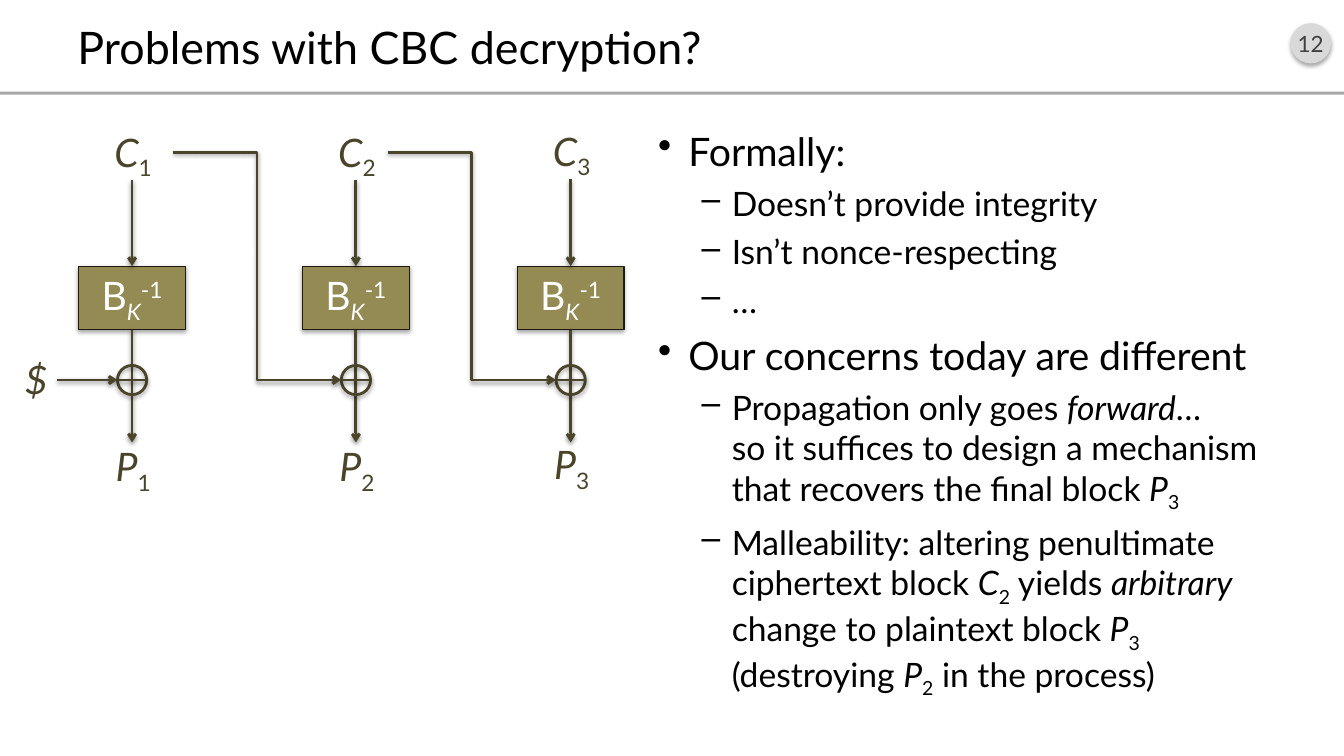
from lxml.etree import SubElement
from pptx import Presentation
from pptx.dml.color import RGBColor
from pptx.enum.shapes import MSO_CONNECTOR, MSO_SHAPE
from pptx.enum.text import MSO_ANCHOR, PP_ALIGN
from pptx.oxml.ns import qn
from pptx.util import Inches, Pt

# Content: runs are (text, style)
TITLE = "Problems with CBC decryption?"
PAGE_NUMBER = "12"
BODY = [  # level, runs
    (0, [("Formally:", "")]),
    (1, [("Doesn’t provide integrity", "")]),
    (1, [("Isn’t nonce-respecting", "")]),
    (1, [("…", "")]),
    (0, [("Our concerns today are different", "")]),
    (1, [("Propagation only goes ", ""), ("forward", "italic"),
         ("…\nso it suffices to design a mechanism that recovers the final block ", ""),
         ("P", "italic"), ("3", "sub")]),
    (1, [("Malleability: altering penultimate ciphertext block ", ""),
         ("C", "italic"), ("2", "sub"), (" yields ", ""), ("arbitrary", "italic"),
         (" change to plaintext block ", ""), ("P", "italic"), ("3", "sub"),
         (" (destroying ", ""), ("P", "italic"), ("2", "sub"), (" in the process)", "")]),
]
CIPHER = [("B", ""), ("K", "italic sub"), ("-1", "sup")]
BLOCKS = [  # number, centre x, label top of C, label top of P
    ("1", 1.31, 1.22, 4.34),
    ("2", 3.53, 1.22, 4.34),
    ("3", 5.66, 1.21, 4.32),
]
LEVELS = [  # bullet, indent, space before, size
    ("•", 0.3, 8, 28),
    ("–", 0.73, 6, 24),
]
BASELINES = {"sub": "-25000", "sup": "30000"}

# Look and measures
FONT = "Lato"
BLACK, WHITE, INK = "000000", "FFFFFF", "4A452A"
BOX_FILL, BOX_LINE = "948A54", "1E1C11"
BOX_WIDTH, BOX_HEIGHT, BOX_TOP = 1.06, 0.63, 2.64
LABEL_WIDTH, LABEL_HEIGHT = 0.78, 0.57
RADIUS, XOR_Y = 0.145, 3.77
FEED_Y, FEED_LENGTH = 1.51, 1.67

presentation = Presentation()
presentation.slide_width, presentation.slide_height = Inches(13.33), Inches(7.5)
slide = presentation.slides.add_slide(presentation.slide_layouts[6])


def color(target, value):
    target.rgb = RGBColor.from_string(value)


def add_shadow(shape, distance, opacity):
    effects = SubElement(shape.element.spPr, qn("a:effectLst"))
    shadow = SubElement(effects, qn("a:outerShdw"), blurRad="40000", dist=str(distance),
                        dir="5400000", rotWithShape="0")
    black = SubElement(shadow, qn("a:srgbClr"), val=BLACK)
    SubElement(black, qn("a:alpha"), val=str(opacity))


def write(paragraph, runs, size, font_color, align=PP_ALIGN.LEFT):
    paragraph.alignment = align
    paragraph.font.name, paragraph.font.size = FONT, Pt(size)
    color(paragraph.font.color, font_color)
    for text, style in runs:
        for index, part in enumerate(text.split("\n")):
            if index:
                paragraph.add_line_break()
            run = paragraph.add_run()
            run.text = part
            for word in style.split():
                if word == "italic":
                    run.font.italic = True
                else:
                    run._r.get_or_add_rPr().set("baseline", BASELINES[word])


def add_text(left, top, width, height):
    box = slide.shapes.add_textbox(*map(Inches, (left, top, width, height)))
    box.text_frame.word_wrap = True
    return box.text_frame


def add_label(center, top, runs, align=PP_ALIGN.CENTER, width=LABEL_WIDTH):
    frame = add_text(center - width / 2, top, width, LABEL_HEIGHT)
    write(frame.paragraphs[0], runs, 28, INK, align)


def add_shape(kind, left, top, width, height, fill=None, line=None, line_width=2, shadow=True):
    shape = slide.shapes.add_shape(kind, *map(Inches, (left, top, width, height)))
    if fill:
        shape.fill.solid()
        color(shape.fill.fore_color, fill)
    else:
        shape.fill.background()
    if line:
        color(shape.line.color, line)
        shape.line.width = Pt(line_width)
    else:
        shape.line.fill.background()
    if shadow:
        add_shadow(shape, 23000, 35000)
    else:
        shape.shadow.inherit = False
    shape.text_frame.vertical_anchor = MSO_ANCHOR.MIDDLE
    return shape


def add_line(x1, y1, x2, y2, kind=MSO_CONNECTOR.STRAIGHT, arrow=True):
    line = slide.shapes.add_connector(kind, *map(Inches, (x1, y1, x2, y2)))
    color(line.line.color, INK)
    line.line.width = Pt(2)
    if arrow:
        SubElement(line.element.spPr.find(qn("a:ln")), qn("a:tailEnd"), type="arrow")
    add_shadow(line, 20000, 38000)
    return line


# Header: page number, rule and title
badge = add_shape(MSO_SHAPE.OVAL, 12.8, 0.23, 0.4, 0.4, fill="D9D9D9")
badge.text_frame.margin_left = badge.text_frame.margin_right = 0
badge.text_frame.word_wrap = False
write(badge.text_frame.paragraphs[0], [(PAGE_NUMBER, "")], 16, "404040", PP_ALIGN.CENTER)
add_shape(MSO_SHAPE.RECTANGLE, 0, 0.91, 13.33, 0.03, fill="A6A6A6", shadow=False)
title = add_text(0.67, 0.16, 12, 0.6)
title.vertical_anchor = MSO_ANCHOR.MIDDLE
write(title.paragraphs[0], [(TITLE, "")], 32, BLACK)

# Bulleted text
body = add_text(6.43, 1.21, 6.24, 5.75)
for index, (level, runs) in enumerate(BODY):
    paragraph = body.add_paragraph() if index else body.paragraphs[0]
    bullet, indent, space, size = LEVELS[level]
    paragraph.level = level
    paragraph.space_before = Pt(space)
    write(paragraph, runs, size, BLACK)
    properties = paragraph._p.get_or_add_pPr()
    properties.set("marL", str(Inches(indent)))
    properties.set("indent", str(Inches(-0.3)))
    marker = SubElement(properties, qn("a:buChar"), char=bullet)
    properties.find(qn("a:defRPr")).addprevious(marker)

# Decryption chains
for number, center, cipher_top, plain_top in BLOCKS:
    box = add_shape(MSO_SHAPE.RECTANGLE, center - BOX_WIDTH / 2, BOX_TOP, BOX_WIDTH, BOX_HEIGHT,
                    BOX_FILL, BOX_LINE, 0.75)
    write(box.text_frame.paragraphs[0], CIPHER, 28, WHITE, PP_ALIGN.CENTER)
    add_line(center, cipher_top + LABEL_HEIGHT, center, BOX_TOP).end_connect(box, 0)
    add_line(center, BOX_TOP + BOX_HEIGHT, center, 4.39).begin_connect(box, 2)
    add_label(center + 0.01, plain_top, [("P", "italic"), (number, "sub")])
    add_label(center + 0.01, cipher_top, [("C", "italic"), (number, "sub")])
    add_shape(MSO_SHAPE.OVAL, center - RADIUS, XOR_Y - RADIUS, 2 * RADIUS, 2 * RADIUS, line=INK)
    add_line(center - RADIUS, XOR_Y, center + RADIUS, XOR_Y, arrow=False)

# Inputs to each XOR: random start, then the previous ciphertext
add_label(0.34, 3.48, [("$", "italic")], PP_ALIGN.RIGHT, width=0.46)
first_center = BLOCKS[0][1]
add_line(0.57, XOR_Y, first_center - RADIUS, XOR_Y)
for _, center, _, _ in BLOCKS[1:]:
    xor_left = center - RADIUS
    add_line(xor_left - FEED_LENGTH, FEED_Y, xor_left, XOR_Y, MSO_CONNECTOR.ELBOW)

presentation.save("out.pptx")
